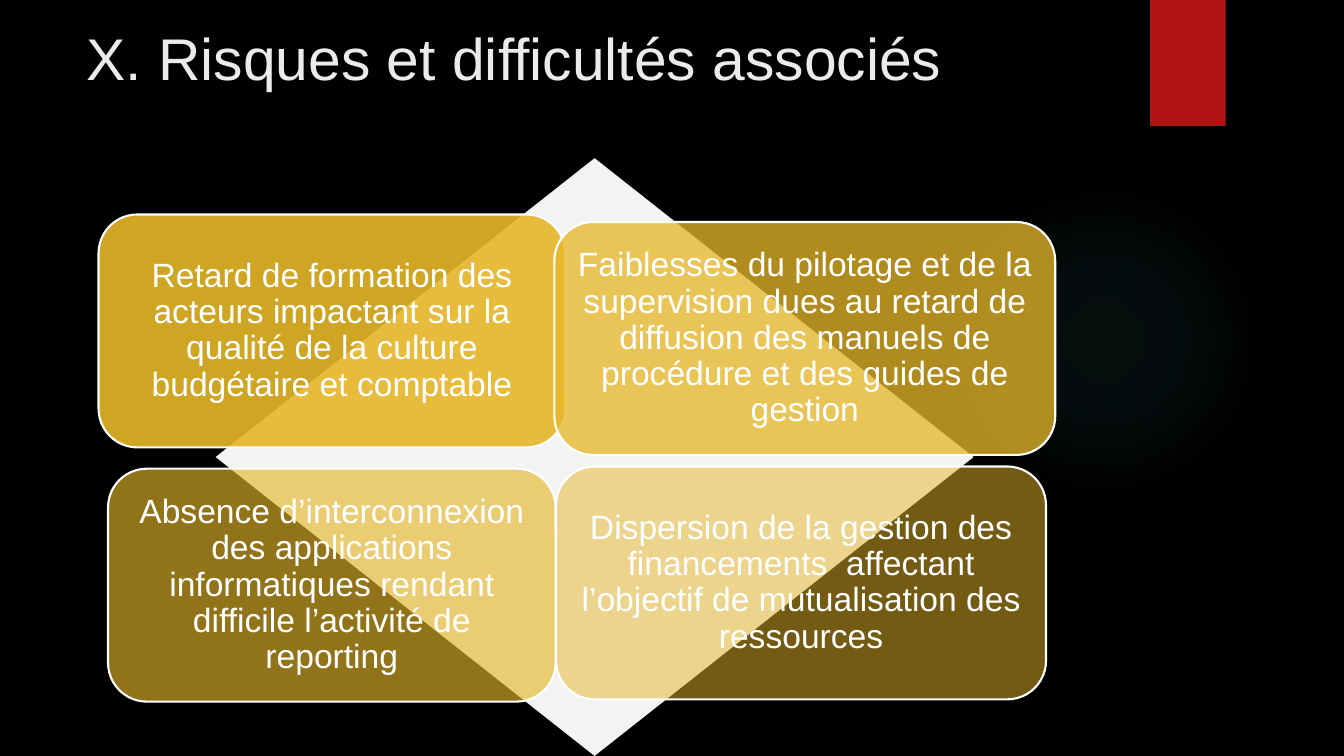
from lxml import etree
from pptx import Presentation
from pptx.dml.color import RGBColor
from pptx.enum.shapes import MSO_SHAPE as Shape
from pptx.enum.text import MSO_ANCHOR as Anchor, PP_ALIGN as Align
from pptx.oxml import parse_xml
from pptx.oxml.ns import nsdecls, qn
from pptx.util import Pt

BLACK = RGBColor(0x00, 0x00, 0x00)
RED = RGBColor(0xB0, 0x15, 0x13)
GOLD = RGBColor(0xE6, 0xB7, 0x29)
PALE = RGBColor(0xF3, 0xF3, 0xF3)
WHITE = RGBColor(0xFF, 0xFF, 0xFF)
TITLE_GREY = RGBColor(0xEB, 0xEB, 0xEB)
TEAL = RGBColor(0x50, 0xB9, 0xC1)

TITLE_FONT = {"name": "Arial", "size": Pt(42)}
CARD_FONT = {"name": "Arial", "size": Pt(24)}
CARD_FRAME = {
    "word_wrap": True, "vertical_anchor": Anchor.MIDDLE,
    "margin_left": Pt(7.2), "margin_right": Pt(7.2),
    "margin_top": Pt(7.2), "margin_bottom": Pt(7.2),
}
CARD_PARAGRAPH = {"alignment": Align.CENTER, "line_spacing": 0.9}
CARD_HEIGHT = 166.4

RISKS = [
    (-83.6, 40.2, 333.4, 90,
     "Retard de formation des acteurs impactant sur la qualité de la culture budgétaire et comptable"),
    (242, 45.6, 357.8, 77,
     "Faiblesses du pilotage et de la supervision dues au retard de diffusion des manuels de procédure et des guides de gestion"),
    (-76.8, 221.8, 319.7, 63,
     "Absence d’interconnexion des applications informatiques rendant difficile l’activité de reporting"),
    (243.2, 220.2, 350, 50,
     "Dispersion de la gestion des financements  affectant l’objectif de mutualisation des ressources"),
]


def apply(target, values):
    for key, value in values.items():
        setattr(target, key, value)


def write(paragraph, text, font, color):
    run = paragraph.add_run()
    run.text = text
    apply(run.font, font)
    run.font.color.rgb = color


def add_solid(slide, kind, box, color, opacity=100):
    solid = slide.shapes.add_shape(kind, *map(Pt, box))
    solid.shadow.inherit = False
    solid.fill.solid()
    solid.fill.fore_color.rgb = color
    solid.line.fill.background()
    if opacity < 100:
        tint = solid.fill._xPr.find(qn("a:solidFill"))[0]
        etree.SubElement(tint, qn("a:alpha"), val=str(opacity * 1000))
    return solid


def add_decor(slide, left, top, width, height):
    glow = add_solid(slide, Shape.OVAL, (left + 677.5, top + 131.8, 221.8, 221.8), TEAL)
    stops = "".join(
        f'<a:gs pos="{position * 1000}"><a:srgbClr val="{TEAL}">'
        f'<a:alpha val="{opacity * 1000}"/></a:srgbClr></a:gs>'
        for position, opacity in ((0, 7), (36, 6), (69, 0), (100, 0)))
    gradient = parse_xml(
        f'<a:gradFill {nsdecls("a")}><a:gsLst>{stops}</a:gsLst><a:path path="circle">'
        '<a:fillToRect l="50000" t="50000" r="50000" b="50000"/></a:path></a:gradFill>')
    properties = glow.fill._xPr
    properties.replace(properties.find(qn("a:solidFill")), gradient)
    add_solid(slide, Shape.RECTANGLE, (left + width - 138.5, top, 54, 90), RED)


def add_title(slide, left, top, width, height):
    title = slide.shapes.add_textbox(*map(Pt, (left, top, width, height)))
    apply(title.text_frame, {"word_wrap": True, "vertical_anchor": Anchor.TOP})
    write(title.text_frame.paragraphs[0], "X. Risques et difficultés associés", TITLE_FONT, TITLE_GREY)


def add_risk_matrix(slide, left, top, width, height):
    add_solid(slide, Shape.DIAMOND, (left, top, width, height), PALE)
    for dx, dy, card_width, opacity, risk in RISKS:
        card = add_solid(slide, Shape.ROUNDED_RECTANGLE,
                         (left + dx, top + dy, card_width, CARD_HEIGHT), GOLD, opacity)
        card.line.color.rgb = WHITE
        card.line.width = Pt(1.5)
        apply(card.text_frame, CARD_FRAME)
        paragraph = card.text_frame.paragraphs[0]
        apply(paragraph, CARD_PARAGRAPH)
        write(paragraph, risk, CARD_FONT, WHITE)


def main():
    deck = Presentation()
    deck.slide_width, deck.slide_height = Pt(960), Pt(540)
    slide = deck.slides.add_slide(deck.slide_layouts[6])
    slide.background.fill.solid()
    slide.background.fill.fore_color.rgb = BLACK
    add_decor(slide, 0, 0, 960, 540)
    add_title(slide, 54.7, 12.2, 740.9, 76.3)
    add_risk_matrix(slide, 154, 113, 541.4, 427)
    deck.save("out.pptx")


if __name__ == "__main__":
    main()
